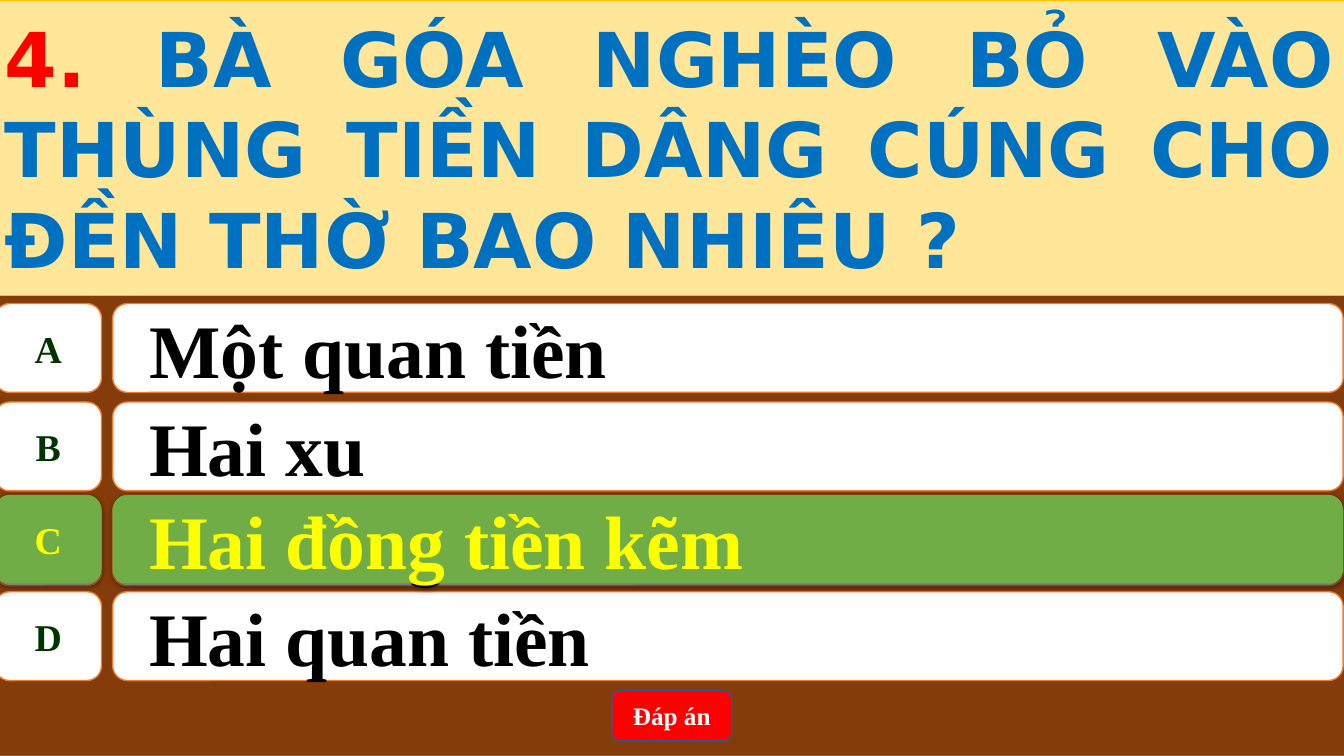
import dataclasses

import lxml.etree
import pptx
import pptx.dml.color
import pptx.enum.shapes
import pptx.enum.text
import pptx.oxml.ns
import pptx.util

Cm = pptx.util.Cm
Pt = pptx.util.Pt
SHAPE = pptx.enum.shapes.MSO_SHAPE
ALIGN = pptx.enum.text.PP_ALIGN


@dataclasses.dataclass(frozen=True)
class Theme:
    backdrop: str = "843C0B"
    backdrop_edge: str = "43739E"
    banner: str = "FFE699"
    banner_edge: str = "FFC000"
    number: str = "FF0000"
    question: str = "0070C0"
    card: str = "FFFFFF"
    card_edge: str = "ED7D31"
    letter: str = "003300"
    answer: str = "000000"
    correct_card: str = "70AD47"
    correct_text: str = "FFFF00"
    button: str = "FF0000"
    button_edge: str = "325491"
    button_text: str = "FFFFFF"
    title_font: str = "DejaVu Sans"
    body_font: str = "Times New Roman"
    large: int = 54
    medium: int = 27
    small: int = 18


class QuizSlide:
    """Builds the parts of one quiz slide in a shared theme."""

    def __init__(self, deck, theme):
        self.theme = theme
        self.slide = deck.slides.add_slide(deck.slide_layouts[5])

    def paint(self, shape, fill, edge=None, width=1):
        shape.fill.solid()
        shape.fill.fore_color.rgb = pptx.dml.color.RGBColor.from_string(fill)
        if edge:
            shape.line.color.rgb = pptx.dml.color.RGBColor.from_string(edge)
            shape.line.width = Pt(width)
        else:
            shape.line.fill.background()

    def format_run(self, run, size, color, font):
        run.font.size = Pt(size)
        run.font.bold = True
        run.font.name = font
        run.font.color.rgb = pptx.dml.color.RGBColor.from_string(color)

    def box(self, shapes, kind, left, top, width, height, fill, edge=None):
        box = shapes.add_shape(kind, Cm(left), Cm(top), Cm(width), Cm(height))
        box.shadow.inherit = False
        self.paint(box, fill, edge)
        return box

    def label(self, box, text, size, color, align, wrap=True):
        frame = box.text_frame
        frame.text = text
        frame.word_wrap = wrap
        frame.vertical_anchor = pptx.enum.text.MSO_ANCHOR.MIDDLE
        paragraph = frame.paragraphs[0]
        paragraph.alignment = align
        self.format_run(paragraph.runs[0], size, color, self.theme.body_font)
        return paragraph

    def drop_shadow(self, box):
        qn = pptx.oxml.ns.qn
        effects = box._element.spPr.find(qn("a:effectLst"))
        shadow = lxml.etree.SubElement(
            effects, qn("a:outerShdw"), blurRad=str(Pt(4.5)), dist=str(Pt(1.5)),
            dir="5400000", algn="ctr", rotWithShape="0")
        black = lxml.etree.SubElement(shadow, qn("a:srgbClr"), val="000000")
        lxml.etree.SubElement(black, qn("a:alpha"), val="63000")

    def backdrop(self):
        backdrop = self.box(self.slide.shapes, SHAPE.RECTANGLE, -0.13, 0, 34.01, 19.05,
                            self.theme.backdrop, self.theme.backdrop_edge)
        self.slide.shapes._spTree.insert(2, backdrop._element)

    def question(self, number, wording):
        title = self.slide.shapes.title
        title.left, title.top = Cm(-0.13), Cm(0)
        title.width, title.height = Cm(34.01), Cm(7.44)
        self.paint(title, self.theme.banner, self.theme.banner_edge, 0.5)
        frame = title.text_frame
        frame.word_wrap = True
        frame.auto_size = pptx.enum.text.MSO_AUTO_SIZE.NONE
        frame.vertical_anchor = pptx.enum.text.MSO_ANCHOR.MIDDLE
        paragraph = frame.paragraphs[0]
        paragraph.alignment = ALIGN.JUSTIFY
        for text, color in ((number, self.theme.number), (wording, self.theme.question)):
            run = paragraph.add_run()
            run.text = text
            self.format_run(run, self.theme.large, color, self.theme.title_font)

    def answer(self, letter, text, top, correct=False):
        theme = self.theme
        if correct:
            fill, edge = theme.correct_card, None
            letter_color = answer_color = theme.correct_text
        else:
            fill, edge = theme.card, theme.card_edge
            letter_color, answer_color = theme.letter, theme.answer
        row = self.slide.shapes.add_group_shape().shapes
        answer_card = self.box(row, SHAPE.ROUNDED_RECTANGLE, 2.84, top, 31.01, 2.24, fill, edge)
        letter_card = self.box(row, SHAPE.FLOWCHART_ALTERNATE_PROCESS, -0.13, top, 2.69, 2.24,
                               fill, edge)
        paragraph = self.label(answer_card, text, theme.large, answer_color, ALIGN.LEFT)
        paragraph.level = 1
        indents = paragraph._p.get_or_add_pPr()
        indents.set("marL", str(Cm(1.27)))
        indents.set("indent", str(Cm(-0.71)))
        self.label(letter_card, letter, theme.medium, letter_color, ALIGN.CENTER, wrap=False)
        if correct:
            self.drop_shadow(answer_card)
            self.drop_shadow(letter_card)

    def button(self, text):
        theme = self.theme
        button = self.box(self.slide.shapes, SHAPE.ROUNDED_RECTANGLE, 15.42, 17.4, 3.02, 1.27,
                          theme.button, theme.button_edge)
        self.label(button, text, theme.small, theme.button_text, ALIGN.CENTER)


def main():
    deck = pptx.Presentation()
    deck.slide_width, deck.slide_height = Cm(33.87), Cm(19.05)
    quiz = QuizSlide(deck, Theme())
    quiz.backdrop()
    quiz.question("4. ", "BÀ GÓA NGHÈO BỎ VÀO THÙNG TIỀN DÂNG CÚNG CHO ĐỀN THỜ BAO NHIÊU ?")
    answers = (
        ("A", "Một quan tiền", 7.65),
        ("B", "Hai xu", 10.13),
        ("C", "Hai đồng tiền kẽm", 12.52),
        ("D", "Hai quan tiền", 14.91),
    )
    for letter, text, top in answers:
        quiz.answer(letter, text, top)
    quiz.button("Đáp án")
    correct_letter, correct_text, correct_top = answers[2]
    quiz.answer(correct_letter, correct_text, correct_top - 0.05, correct=True)
    deck.save("out.pptx")


if __name__ == "__main__":
    main()
